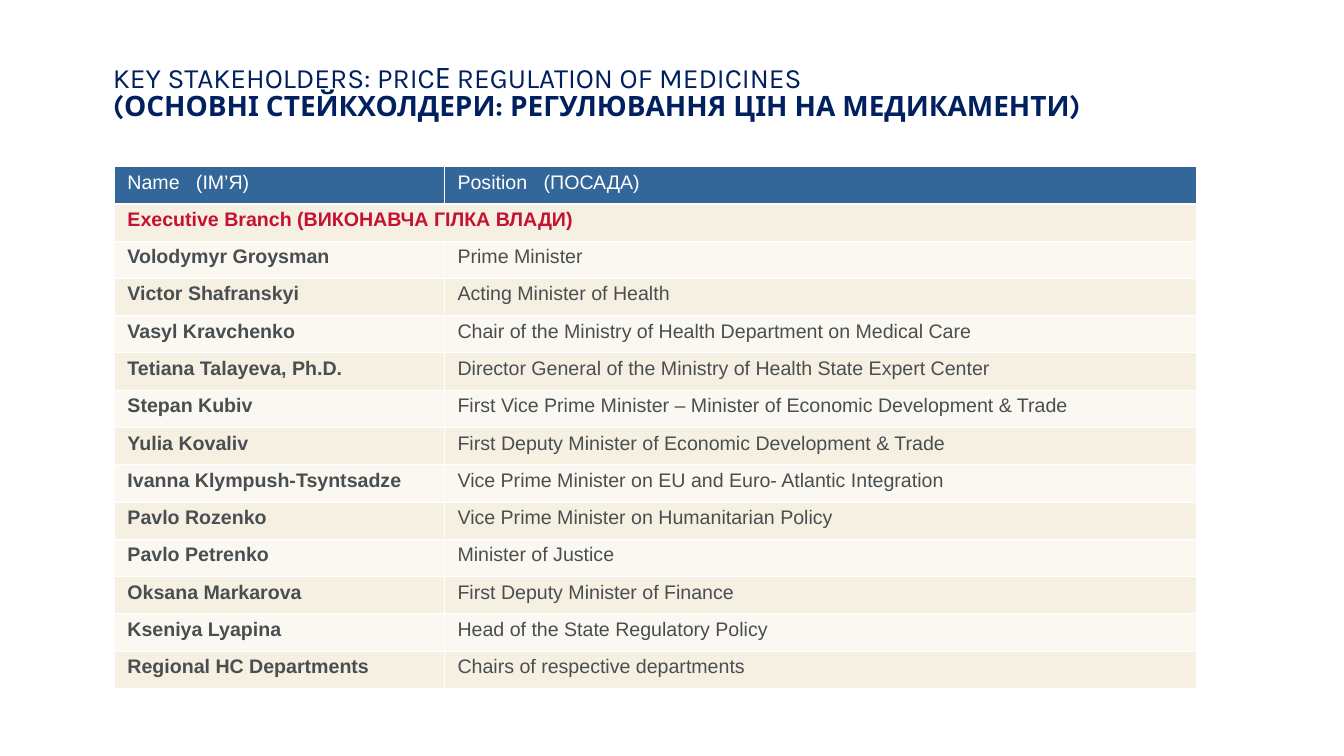
from lxml.etree import SubElement as Sub
from pptx import Presentation
from pptx.dml.color import RGBColor
from pptx.enum.text import MSO_ANCHOR as Anchor, MSO_AUTO_SIZE as Fit, PP_ALIGN as Align
from pptx.oxml.ns import qn
from pptx.util import Inches, Pt

NAVY, BLUE, RED, GRAY, WHITE = "002060", "336699", "C41230", "494F50", "FFFFFF"
BANDS = ["F6F0E3", "FAF8F1"]
COLS = [6.55, 14.93]
ROW = 0.74
HEADS = [("Name\t(ІМ’Я)", 1.36), ("Position\t(ПОСАДА)", 1.71)]
BRANCH = "Executive Branch (ВИКОНАВЧА ГІЛКА ВЛАДИ)"
PEOPLE = [
    ("Volodymyr Groysman", "Prime Minister"),
    ("Victor Shafranskyi", "Acting Minister of Health"),
    ("Vasyl Kravchenko", "Chair of the Ministry of Health Department on Medical Care"),
    ("Tetiana Talayeva, Ph.D.", "Director General of the Ministry of Health State Expert Center"),
    ("Stepan Kubiv", "First Vice Prime Minister – Minister of Economic Development & Trade"),
    ("Yulia Kovaliv", "First Deputy Minister of Economic Development & Trade"),
    ("Ivanna Klympush-Tsyntsadze", "Vice Prime Minister on EU and Euro- Atlantic Integration"),
    ("Pavlo Rozenko", "Vice Prime Minister on Humanitarian Policy"),
    ("Pavlo Petrenko", "Minister of Justice"),
    ("Oksana Markarova", "First Deputy Minister of Finance"),
    ("Kseniya Lyapina", "Head of the State Regulatory Policy"),
    ("Regional HC Departments", "Chairs of respective departments"),
]


def tint(color, code):
    color.rgb = RGBColor.from_string(code)


def put(item, **values):
    for name, value in values.items():
        setattr(item, name, value)


def style(font, code, **values):
    put(font, **values)
    tint(font.color, code)


def edge(cell, base):
    """Draw white cell borders, the bottom one base points wide."""
    props = cell._tc.get_or_add_tcPr()
    for spot, (tag, width) in enumerate([("lnL", 1), ("lnR", 1), ("lnT", 1), ("lnB", base)]):
        line = Sub(props, qn(f"a:{tag}"), w=str(Pt(width)))
        fill = Sub(line, qn("a:solidFill"))
        Sub(fill, qn("a:srgbClr"), val=WHITE)
        props.insert(spot, line)


def add_tab(para, pos):
    tabs = Sub(para._p.get_or_add_pPr(), qn("a:tabLst"))
    Sub(tabs, qn("a:tab"), pos=str(Inches(pos)), algn="l")


def fill_cell(cell, text, back, code, bold=False, tab=None, base=1):
    put(cell, margin_left=Inches(0.27), margin_right=Inches(0.27),
        margin_top=Inches(0.1), margin_bottom=Inches(0.1))
    cell.fill.solid()
    tint(cell.fill.fore_color, back)
    edge(cell, base)
    para = cell.text_frame.paragraphs[0]
    if tab:
        add_tab(para, tab)
    run = para.add_run()
    run.text = text
    style(run.font, code, name="Arial", size=Pt(28), bold=bold)


def add_title(slide):
    title = slide.shapes.title
    put(title, left=Inches(2), top=Inches(1.1), width=Inches(23.34), height=Inches(1.52))
    frame = title.text_frame
    put(frame, margin_left=Inches(0.24), margin_right=Inches(0.24),
        margin_top=Inches(0.12), margin_bottom=Inches(0.12),
        word_wrap=True, auto_size=Fit.NONE, vertical_anchor=Anchor.MIDDLE)
    para = frame.paragraphs[0]
    put(para, alignment=Align.LEFT, line_spacing=0.85)
    lines = ["KEY STAKEHOLDERS: PRICЕ REGULATION OF MEDICINES",
             "(ОСНОВНІ СТЕЙКХОЛДЕРИ: РЕГУЛЮВАННЯ ЦІН НА МЕДИКАМЕНТИ)"]
    for num, text in enumerate(lines):
        if num:
            para.add_line_break()
        run = para.add_run()
        run.text = text
        style(run.font, NAVY, name="Karla", size=Pt(40), bold=bool(num))


def add_table(slide):
    count = len(PEOPLE) + 2
    table = slide.shapes.add_table(count, len(COLS), Inches(2.26), Inches(3.3),
                                   Inches(sum(COLS)), Inches(ROW * count)).table
    for col, width in zip(table.columns, COLS):
        col.width = Inches(width)
    for row in table.rows:
        row.height = Inches(ROW)
    for col, (text, tab) in enumerate(HEADS):
        fill_cell(table.cell(0, col), text, BLUE, WHITE, tab=tab, base=3)
    table.cell(1, 0).merge(table.cell(1, 1))
    fill_cell(table.cell(1, 0), BRANCH, BANDS[0], RED, bold=True)
    for row, person in enumerate(PEOPLE, 2):
        for col, text in enumerate(person):
            fill_cell(table.cell(row, col), text, BANDS[(row - 1) % 2], GRAY, bold=col == 0)


def main():
    deck = Presentation()
    put(deck, slide_width=Inches(26.67), slide_height=Inches(15))
    slide = deck.slides.add_slide(deck.slide_layouts[5])
    add_table(slide)
    add_title(slide)
    deck.save("out.pptx")


if __name__ == "__main__":
    main()
